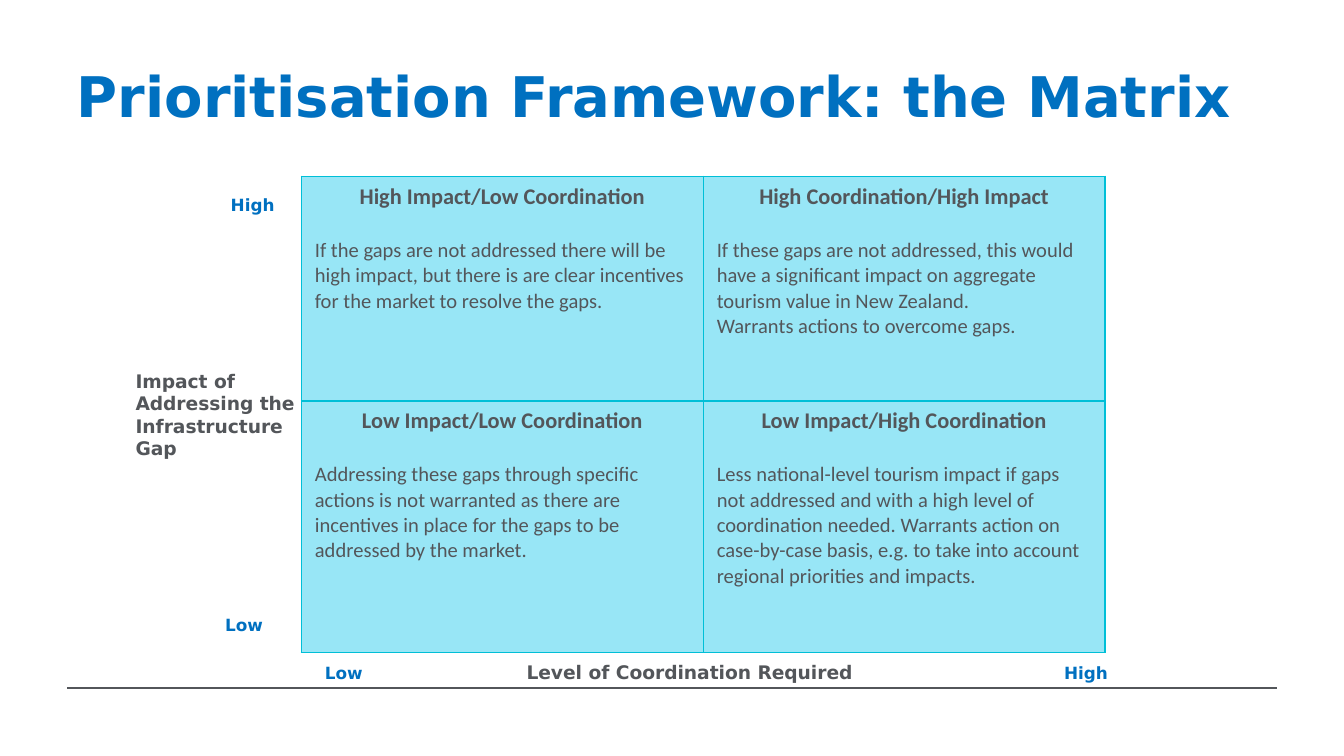
from lxml.etree import SubElement
from pptx import Presentation
from pptx.dml.color import RGBColor
from pptx.enum.shapes import MSO_CONNECTOR as Connector
from pptx.enum.text import MSO_ANCHOR as Anchor, PP_ALIGN as Align
from pptx.oxml.ns import qn
from pptx.util import Pt

COLORS = {"blue": "0070C0", "gray": "53565A", "cell": "98E6F6", "border": "00BFD7"}
HEAD_FONT, BODY_FONT = "DejaVu Sans", "Calibri"

MATRIX = [
    [
        ("High Impact/Low Coordination",
         ["If the gaps are not addressed there will be high impact, but there is are "
          "clear incentives for the market to resolve the gaps."]),
        ("High Coordination/High Impact",
         ["If these gaps are not addressed, this would have a significant impact on "
          "aggregate tourism value in New Zealand.",
          "Warrants actions to overcome gaps."]),
    ],
    [
        ("Low Impact/Low Coordination",
         ["Addressing these gaps through specific actions is not warranted as there are "
          "incentives in place for the gaps to be addressed by the market."]),
        ("Low Impact/High Coordination",
         ["Less national-level tourism impact if gaps not addressed and with a high level "
          "of coordination needed. Warrants action on case-by-case basis, e.g. to take "
          "into account regional priorities and impacts."]),
    ],
]


def add_span(para, text, size, color, font=HEAD_FONT, bold=True):
    span = para.add_run()
    span.text = text
    span.font.name = font
    span.font.size = Pt(size)
    span.font.bold = bold
    span.font.color.rgb = RGBColor.from_string(COLORS[color])


def add_paragraph(frame, index):
    return frame.paragraphs[0] if index == 0 else frame.add_paragraph()


def add_box(page, left, top, width, height):
    frame = page.shapes.add_textbox(Pt(left), Pt(top), Pt(width), Pt(height)).text_frame
    frame.word_wrap = True
    return frame


def set_title(page, text):
    title = page.shapes.title
    title.left, title.top, title.width, title.height = Pt(34), Pt(29), Pt(648), Pt(40)
    frame = title.text_frame
    frame.word_wrap = True
    frame.vertical_anchor = Anchor.BOTTOM
    frame.margin_bottom = 0
    para = frame.paragraphs[0]
    para.alignment = Align.LEFT
    add_span(para, text, 30, "blue")


def add_rule(page):
    rule = page.shapes.add_connector(Connector.STRAIGHT, Pt(36), Pt(368.5), Pt(684), Pt(368.5))
    rule.line.width = Pt(0.8)
    rule.line.color.rgb = RGBColor.from_string(COLORS["gray"])
    SubElement(rule._element.spPr, qn("a:effectLst"))


def set_borders(cell):
    properties = cell._tc.get_or_add_tcPr()
    for index, side in enumerate(("lnL", "lnR", "lnT", "lnB")):
        line = SubElement(properties, qn(f"a:{side}"), w=str(Pt(1)))
        fill = SubElement(line, qn("a:solidFill"))
        SubElement(fill, qn("a:srgbClr"), val=COLORS["border"])
        properties.insert(index, line)  # borders come before the cell fill


def fill_cell(cell, heading, lines):
    cell.fill.solid()
    cell.fill.fore_color.rgb = RGBColor.from_string(COLORS["cell"])
    set_borders(cell)
    para = cell.text_frame.paragraphs[0]
    para.alignment = Align.CENTER
    para.space_after = Pt(14.6)
    add_span(para, heading, 12, "gray", BODY_FONT)
    for text in lines:
        add_span(cell.text_frame.add_paragraph(), text, 11, "gray", BODY_FONT, bold=False)


def add_matrix(page):
    table = page.shapes.add_table(2, 2, Pt(161.5), Pt(94.5), Pt(430.6), Pt(255)).table
    for column in table.columns:
        column.width = Pt(215.3)
    for row, height in zip(table.rows, (120.2, 134.8)):
        row.height = Pt(height)
    for row, contents in zip(table.rows, MATRIX):
        for cell, (heading, lines) in zip(row.cells, contents):
            fill_cell(cell, heading, lines)


def add_vertical_axis(page):
    frame = add_box(page, 65.5, 100.8, 99.4, 252)
    labels = [
        ("High", 9, "blue", 51),
        ("Impact of Addressing the Infrastructure Gap", 10, "gray", 0),
        ("Low", 9, "blue", 48),
    ]
    for index, (text, size, color, indent) in enumerate(labels):
        para = add_paragraph(frame, index)
        if index:
            para.space_before = Pt(83)
        para._p.get_or_add_pPr().set("marL", str(Pt(indent)))
        add_span(para, text, size, color)


def add_horizontal_axis(page):
    para = add_box(page, 167, 348.5, 438.5, 28).paragraphs[0]
    stops = SubElement(para._p.get_or_add_pPr(), qn("a:tabLst"))
    for position in (108, 396):
        SubElement(stops, qn("a:tab"), pos=str(Pt(position)), algn="l")
    add_span(para, "Low", 9, "blue")
    add_span(para, "\t", 12, "gray")
    add_span(para, "Level of Coordination Required", 10, "gray")
    add_span(para, "\t", 12, "gray")
    add_span(para, "High", 9, "blue")


def main():
    deck = Presentation()
    deck.slide_width, deck.slide_height = Pt(720), Pt(405)
    page = deck.slides.add_slide(deck.slide_layouts[5])

    # Title and footer rule
    add_rule(page)
    set_title(page, "Prioritisation Framework: the Matrix")

    # Matrix with its two axes
    add_matrix(page)
    add_horizontal_axis(page)
    add_vertical_axis(page)

    deck.save("out.pptx")


if __name__ == "__main__":
    main()
